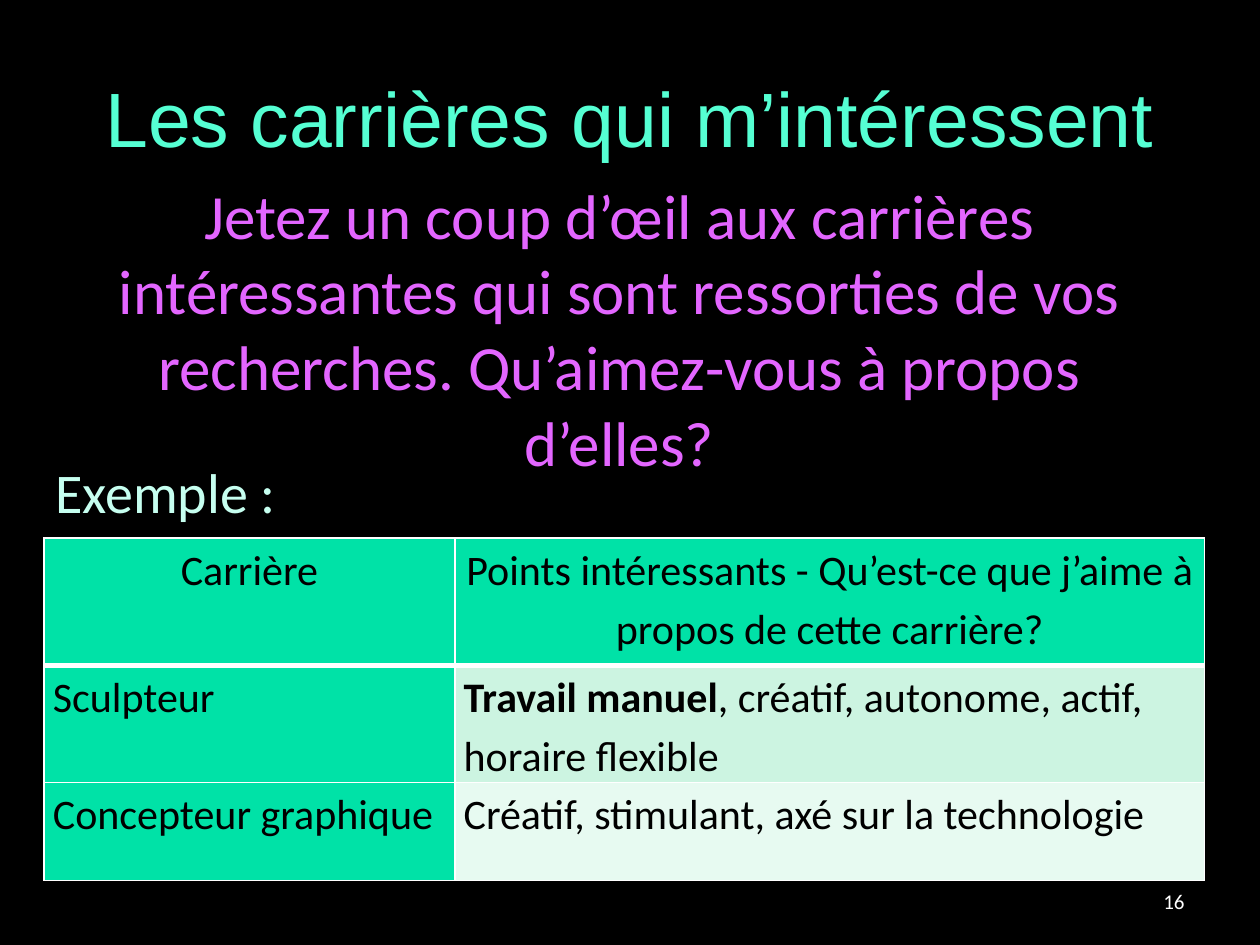
from lxml.etree import SubElement
from pptx import Presentation
from pptx.dml.color import RGBColor
from pptx.enum.text import MSO_ANCHOR, PP_ALIGN
from pptx.oxml.ns import qn
from pptx.util import Inches, Pt

COLORS = {
    "background": "000000",
    "title": "55FFD3",
    "prompt": "E366FF",
    "example": "C6FFF0",
    "accent": "00E2A7",
    "band_dark": "CCF4E1",
    "band_light": "E7FAF1",
    "dark": "000000",
    "light": "FFFFFF",
}

HEADER = ["Carrière", "Points intéressants - Qu’est-ce que j’aime à propos de cette carrière?"]
CAREERS = [
    ["Sculpteur", [("Travail manuel", True), (", créatif, autonome, actif, horaire flexible", False)]],
    ["Concepteur graphique", "Créatif, stimulant, axé sur la technologie"],
]


def rgb(name):
    return RGBColor.from_string(COLORS[name])


def write(tf, text, size, color, font="Calibri", align=PP_ALIGN.LEFT,
          line_spacing=None, space_after=None):
    """Fill one paragraph; text is a string or a list of (text, bold) runs."""
    p = tf.paragraphs[0]
    p.alignment = align
    p.line_spacing = line_spacing
    p.space_after = space_after
    for part, bold in [(text, False)] if isinstance(text, str) else text:
        r = p.add_run()
        r.text = part
        r.font.size = Pt(size)
        r.font.name = font
        r.font.bold = bold
        r.font.color.rgb = rgb(color)


def set_borders(cell, color, **widths):
    """Draw cell edges; widths in points are keyed by lnL, lnR, lnT and lnB."""
    tc_pr = cell._tc.get_or_add_tcPr()
    for index, (edge, width) in enumerate(widths.items()):
        ln = SubElement(tc_pr, qn(f"a:{edge}"), w=str(Pt(width)))
        fill = SubElement(ln, qn("a:solidFill"))
        SubElement(fill, qn("a:srgbClr"), val=COLORS[color])
        tc_pr.insert(index, ln)


class SlideBuilder:
    def __init__(self, prs):
        self.slide = prs.slides.add_slide(prs.slide_layouts[6])
        fill = self.slide.background.fill
        fill.solid()
        fill.fore_color.rgb = rgb("background")

    def text(self, text, left, top, width, height, anchor=MSO_ANCHOR.TOP, **style):
        sp = self.slide.shapes.add_textbox(
            Inches(left), Inches(top), Inches(width), Inches(height))
        tf = sp.text_frame
        tf.word_wrap = True
        tf.vertical_anchor = anchor
        write(tf, text, **style)

    def table(self, rows, left, top, widths, heights):
        shape = self.slide.shapes.add_table(
            len(rows), len(widths), Inches(left), Inches(top),
            Inches(sum(widths)), Inches(sum(heights)))
        table = shape.table
        for column, width in zip(table.columns, widths):
            column.width = Inches(width)
        for i, (row, height) in enumerate(zip(rows, heights)):
            table.rows[i].height = Inches(height)
            for j, text in enumerate(row):
                band = "band_dark" if i % 2 else "band_light"
                self.cell(table.cell(i, j), text, is_header=i == 0,
                          fill="accent" if i == 0 or j == 0 else band)

    def cell(self, cell, text, is_header, fill):
        cell.margin_left = cell.margin_right = Inches(0.07)
        cell.margin_top = cell.margin_bottom = 0
        cell.fill.solid()
        cell.fill.fore_color.rgb = rgb(fill)
        set_borders(cell, "light", lnL=1, lnR=1, lnT=1, lnB=3 if is_header else 1)
        write(cell.text_frame, text, size=24, color="dark",
              align=PP_ALIGN.CENTER if is_header else PP_ALIGN.LEFT,
              line_spacing=1.15, space_after=Pt(10))


def main():
    prs = Presentation()
    prs.slide_width, prs.slide_height = Inches(10), Inches(7.5)
    s = SlideBuilder(prs)
    s.text("Les carrières qui m’intéressent", 0.5, 0.3, 9, 1.25, size=44, color="title",
           font="Arial", align=PP_ALIGN.CENTER, anchor=MSO_ANCHOR.MIDDLE)
    s.table([HEADER, *CAREERS], 0.35, 4.27, widths=[3.26, 5.95], heights=[1.01, 0.93, 0.78])
    s.text("Jetez un coup d’œil aux carrières intéressantes qui sont ressorties de vos "
           "recherches. Qu’aimez-vous à propos d’elles?",
           0.35, 1.35, 9.13, 2.52, size=36, color="prompt", align=PP_ALIGN.CENTER)
    s.text("Exemple :", 0.34, 3.58, 1.97, 0.64, size=32, color="example")
    s.text("16", 7.17, 6.95, 2.33, 0.4, size=12, color="light",
           align=PP_ALIGN.RIGHT, anchor=MSO_ANCHOR.MIDDLE)
    prs.save("out.pptx")


if __name__ == "__main__":
    main()
